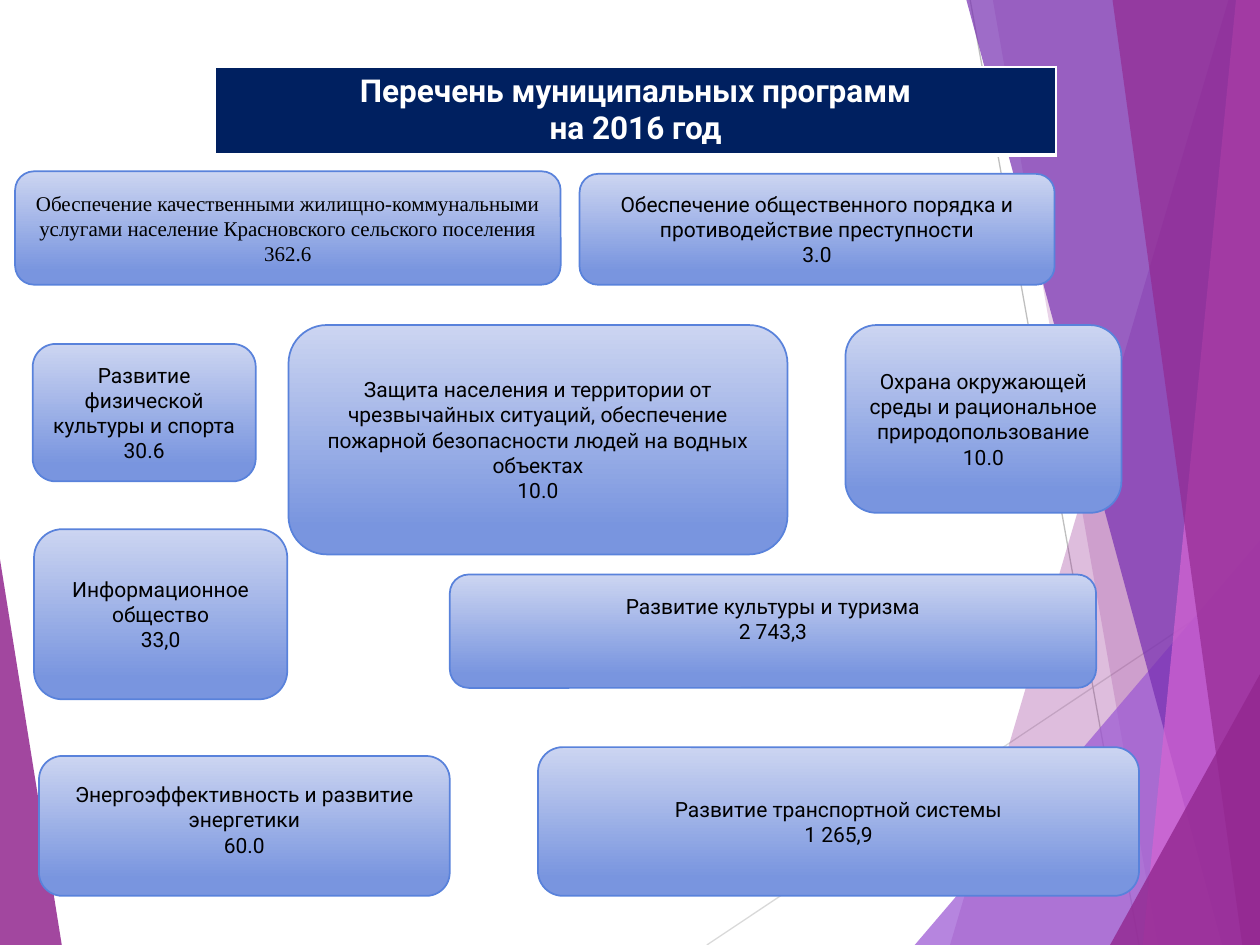
from dataclasses import dataclass

from lxml import etree
from pptx import Presentation
from pptx.dml.color import RGBColor
from pptx.enum.shapes import MSO_CONNECTOR, MSO_SHAPE
from pptx.enum.text import MSO_ANCHOR, PP_ALIGN
from pptx.oxml.ns import qn
from pptx.util import Inches, Pt

STRAIGHT = MSO_CONNECTOR.STRAIGHT
ROUND_RECT = MSO_SHAPE.ROUNDED_RECTANGLE
CENTER, MIDDLE = PP_ALIGN.CENTER, MSO_ANCHOR.MIDDLE
BLANK_LAYOUT = 6

COLS, ROWS = 100, 75  # square grid cells, 0.1 inch each


@dataclass(frozen=True)
class Theme:
    font: str = "Roboto"
    serif: str = "Times New Roman"
    title_size: int = 18
    body_size: int = 12
    white: str = "FFFFFF"
    black: str = "000000"
    navy: str = "002060"
    card_top: str = "CCD5F1"
    card_bottom: str = "7995DF"
    card_edge: str = "5982DB"
    pale_grey: str = "D9D9D9"
    grey: str = "BFBFBF"
    plum: str = "92278F"
    lilac: str = "9B57D3"
    violet: str = "762EB1"
    pink: str = "D665D3"


def rgb(color):
    return RGBColor.from_string(color)


class SlideBuilder:
    def __init__(self, prs, theme):
        self.s = prs.slides.add_slide(prs.slide_layouts[BLANK_LAYOUT])
        self.theme = theme
        self.cell = prs.slide_width / COLS

    def grid(self, *cells):
        return [round(c * self.cell) for c in cells]

    def set_lines(self, tf, lines, font, size, color, bold=False):
        for i, line in enumerate(lines):
            p = tf.add_paragraph() if i else tf.paragraphs[0]
            p.text, p.alignment = line, CENTER
            p.font.name, p.font.size, p.font.bold = font, Pt(size), bold
            p.font.color.rgb = rgb(color)

    def facet(self, points, color, opacity):
        """Translucent polygon; opacity in percent."""
        start, *rest = [self.grid(*pt) for pt in points]
        builder = self.s.shapes.build_freeform(*start)
        builder.add_line_segments(rest, close=True)
        sp = builder.convert_to_shape()
        sp.shadow.inherit = False
        sp.line.fill.background()
        sp.fill.solid()
        sp.fill.fore_color.rgb = rgb(color)
        clr = sp.element.spPr.find(qn("a:solidFill"))[0]
        etree.SubElement(clr, qn("a:alpha"), val=str(opacity * 1000))

    def line(self, start, end, color):
        cxn = self.s.shapes.add_connector(STRAIGHT, *self.grid(*start, *end))
        cxn.line.color.rgb = rgb(color)
        cxn.line.width = Pt(0.75)
        etree.SubElement(cxn.element.spPr, qn("a:effectLst"))

    def banner(self, box, lines):
        t = self.theme
        frame = self.s.shapes.add_table(1, 1, *self.grid(*box))
        cell = frame.table.cell(0, 0)
        tc_pr = cell._tc.get_or_add_tcPr()
        for side, width in (("L", 1), ("R", 1), ("T", 1), ("B", 3)):
            ln = etree.SubElement(tc_pr, qn(f"a:ln{side}"), w=str(Pt(width)))
            fill = etree.SubElement(ln, qn("a:solidFill"))
            etree.SubElement(fill, qn("a:srgbClr"), val=t.white)
        cell.fill.solid()
        cell.fill.fore_color.rgb = rgb(t.navy)
        self.set_lines(cell.text_frame, lines, t.font, t.title_size, t.white,
                       bold=True)

    def card(self, box, name, amount, font=None, lift=0):
        """Rounded programme card; lift adds bottom inset in grid cells."""
        t = self.theme
        sp = self.s.shapes.add_shape(ROUND_RECT, *self.grid(*box))
        sp.shadow.inherit = False
        sp.fill.gradient()
        sp.fill.gradient_angle = 270
        stops = ((0, t.card_top), (0.88, t.card_bottom))
        for stop, (position, color) in zip(sp.fill.gradient_stops, stops):
            stop.position, stop.color.rgb = position, rgb(color)
        sp.line.color.rgb = rgb(t.card_edge)
        sp.line.width = Pt(1)
        tf = sp.text_frame
        tf.word_wrap, tf.vertical_anchor = True, MIDDLE
        tf.margin_bottom = Inches(0.05) + self.grid(lift)[0]
        self.set_lines(tf, (name, amount), font or t.font, t.body_size,
                       t.black)


def main():
    prs = Presentation()
    prs.slide_width, prs.slide_height = Inches(10), Inches(7.5)
    theme = Theme()
    b = SlideBuilder(prs, theme)

    b.facet([(0, 44.4), (4.9, ROWS), (0, ROWS)], theme.plum, 85)
    b.line((56.1, ROWS), (COLS, 45.7), theme.pale_grey)
    b.line((77, 0), (90.4, ROWS), theme.grey)

    # Facets reach the right edge: left corner at the top, then at the bottom
    bands = [
        (97.5, 75.4, theme.plum, 30),
        (78.8, 91.9, theme.plum, 20),
        ((COLS, 42.9), 72.6, theme.lilac, 72),
        (76.7, 97, theme.violet, 70),
        (98.1, 90.7, theme.pink, 70),
        (88.3, 98.6, theme.plum, 65),
        ((COLS, 53.5), 88.1, theme.plum, 80),
    ]
    for top, bottom, color, opacity in bands:
        upper = [top] if isinstance(top, tuple) else [(COLS, 0), (top, 0)]
        b.facet([*upper, (bottom, ROWS), (COLS, ROWS)], color, opacity)

    b.banner((17.1, 5.3, 66.7, 7),
             ("Перечень муниципальных программ", "на 2016 год"))

    b.card((1.2, 13.6, 43.3, 9),
           "Обеспечение качественными жилищно-коммунальными услугами "
           "население Красновского сельского поселения", "362.6",
           font=theme.serif)
    b.card((46, 13.8, 37.7, 8.8),
           "Обеспечение общественного порядка и противодействие "
           "преступности", "3.0")
    b.card((22.9, 25.8, 39.6, 18.2),
           "Защита населения и территории от чрезвычайных ситуаций, "
           "обеспечение пожарной безопасности людей на водных объектах",
           "10.0")
    b.card((67.1, 25.8, 21.9, 14.9),
           "Охрана окружающей среды и рациональное природопользование",
           "10.0")
    b.card((2.6, 27.3, 17.7, 10.9),
           "Развитие физической культуры и спорта", "30.6")
    b.card((2.7, 42, 20.1, 13.5), "Информационное общество", "33,0")
    b.card((35.7, 45.6, 51.3, 9),
           "Развитие культуры и туризма", "2 743,3", lift=2)
    b.card((42.7, 59.3, 47.7, 11.8),
           "Развитие транспортной системы", "1 265,9")
    b.card((3.1, 60, 32.6, 11.1),
           "Энергоэффективность и развитие энергетики", "60.0", lift=1)

    prs.save("out.pptx")


if __name__ == "__main__":
    main()
